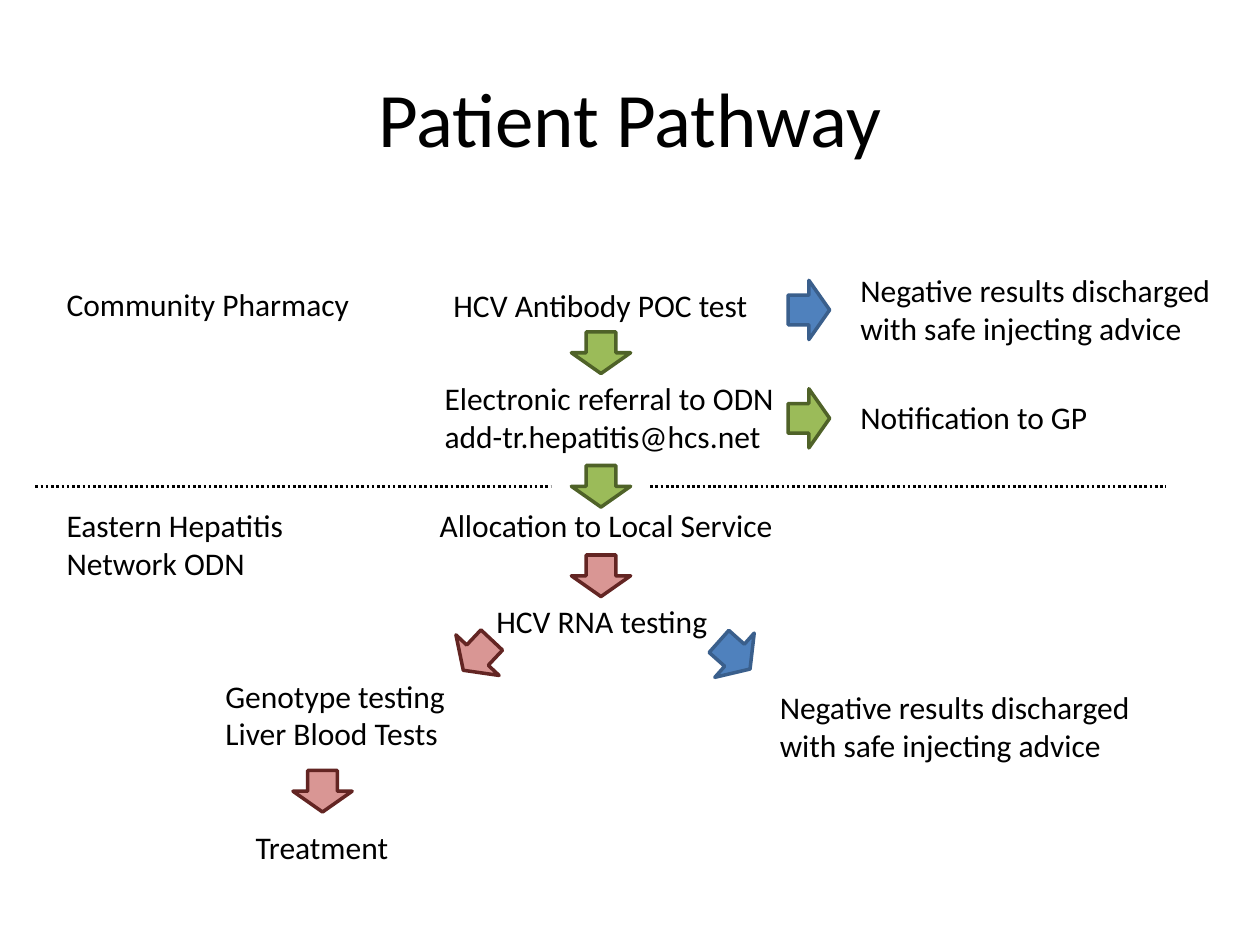
from lxml import etree
from pptx import Presentation
from pptx.dml.color import RGBColor
from pptx.enum.dml import MSO_LINE
from pptx.enum.shapes import MSO_CONNECTOR, MSO_SHAPE
from pptx.enum.text import MSO_ANCHOR, PP_ALIGN
from pptx.oxml.ns import qn
from pptx.util import Inches, Pt

DOWN_ARROW = MSO_SHAPE.DOWN_ARROW
STRAIGHT = MSO_CONNECTOR.STRAIGHT
FONT = "Calibri"
BLACK = RGBColor(0x00, 0x00, 0x00)

# Fill and outline of each kind of arrow
REFERRAL = RGBColor(0x9B, 0xBB, 0x59), RGBColor(0x4F, 0x62, 0x28)
CARE = RGBColor(0xD9, 0x96, 0x94), RGBColor(0x63, 0x25, 0x23)
DISCHARGE = RGBColor(0x4F, 0x81, 0xBD), RGBColor(0x3A, 0x5F, 0x8C)

# Grid, in inches
SETTING_LEFT = 0.43
OUTCOME_LEFT = 6.73
MAIN_CENTRE = 4.77
TREATMENT_CENTRE = 2.56
OUTCOME_ARROW_CENTRE = 6.42
BRANCH_ROW = 5.2
LINE_HEIGHT, PADDING = 0.31, 0.09
ARROW_WIDTH, ARROW_HEIGHT = 0.47, 0.33
DIVIDER_TOP, DIVIDER_LENGTH = 3.86, 4.09
DIVIDER_LEFTS = (0.28, 5.16)

TITLE = "Patient Pathway"
NEGATIVE = "Negative results discharged with safe injecting advice"

# Text, left, top, width, number of lines
STEPS = [
    ("Community Pharmacy", SETTING_LEFT, 2.21, 2.68, 1),
    ("Eastern Hepatitis Network ODN", SETTING_LEFT, 3.97, 2.25, 2),
    ("HCV Antibody POC test", 3.5, 2.22, 2.99, 1),
    ("Electronic referral to ODN\nadd-tr.hepatitis@hcs.net", 3.43, 2.96, 2.9, 2),
    ("Allocation to Local Service", 3.39, 3.97, 3.11, 1),
    ("HCV RNA testing", 3.84, 4.73, 2.05, 1),
    ("Genotype testing\nLiver Blood Tests", 1.69, 5.32, 2.05, 2),
    ("Treatment", 1.93, 6.52, 1.49, 1),
    (NEGATIVE, OUTCOME_LEFT, 2.1, 2.99, 2),
    ("Notification to GP", OUTCOME_LEFT, 3.11, 2.2, 1),
    (NEGATIVE, 6.09, 5.41, 2.99, 2),
]

# Centre x, centre y, rotation, colours
ARROWS = [
    (MAIN_CENTRE, 2.8, 0, REFERRAL),
    (MAIN_CENTRE, 3.86, 0, REFERRAL),
    (MAIN_CENTRE, 4.57, 0, CARE),
    (5.83, BRANCH_ROW, 311.7, DISCHARGE),
    (3.79, BRANCH_ROW, 43.2, CARE),
    (TREATMENT_CENTRE, 6.28, 0, CARE),
    (OUTCOME_ARROW_CENTRE, 2.46, 270, DISCHARGE),
    (OUTCOME_ARROW_CENTRE, 3.32, 270, REFERRAL),
]


def format_text(text_frame, size, alignment):
    for paragraph in text_frame.paragraphs:
        paragraph.alignment = alignment
        for run in paragraph.runs:
            run.font.name = FONT
            run.font.size = Pt(size)
            run.font.color.rgb = BLACK


def add_title(slide):
    title = slide.shapes.title
    title.left, title.top = Inches(0.5), Inches(0.3)
    title.width, title.height = Inches(9), Inches(1.25)
    title.text_frame.text = TITLE
    title.text_frame.vertical_anchor = MSO_ANCHOR.MIDDLE
    format_text(title.text_frame, 44, PP_ALIGN.CENTER)


def add_step(slide, text, left, top, width, lines):
    height = lines * LINE_HEIGHT + PADDING
    box = slide.shapes.add_textbox(Inches(left), Inches(top), Inches(width), Inches(height))
    box.text_frame.word_wrap = True
    box.text_frame.text = text
    format_text(box.text_frame, 18, PP_ALIGN.LEFT)


def add_arrow(slide, centre_x, centre_y, rotation, colours):
    arrow = slide.shapes.add_shape(
        DOWN_ARROW,
        Inches(centre_x - ARROW_WIDTH / 2), Inches(centre_y - ARROW_HEIGHT / 2),
        Inches(ARROW_WIDTH), Inches(ARROW_HEIGHT))
    fill, outline = colours
    arrow.rotation = rotation
    arrow.shadow.inherit = False
    arrow.fill.solid()
    arrow.fill.fore_color.rgb = fill
    arrow.line.color.rgb = outline
    arrow.line.width = Pt(2)


def add_divider(slide, left):
    top = Inches(DIVIDER_TOP)
    divider = slide.shapes.add_connector(
        STRAIGHT, Inches(left), top, Inches(left + DIVIDER_LENGTH), top)
    divider.line.color.rgb = BLACK
    divider.line.width = Pt(1.5)
    divider.line.dash_style = MSO_LINE.ROUND_DOT  # stored as sysDot
    etree.SubElement(divider._element.spPr, qn("a:effectLst"))


def main():
    presentation = Presentation()
    presentation.slide_width, presentation.slide_height = Inches(10), Inches(7.5)
    slide = presentation.slides.add_slide(presentation.slide_layouts.get_by_name("Title Only"))
    add_title(slide)
    for step in STEPS:
        add_step(slide, *step)
    for arrow in ARROWS:
        add_arrow(slide, *arrow)
    for left in DIVIDER_LEFTS:
        add_divider(slide, left)
    presentation.save("out.pptx")


if __name__ == "__main__":
    main()
